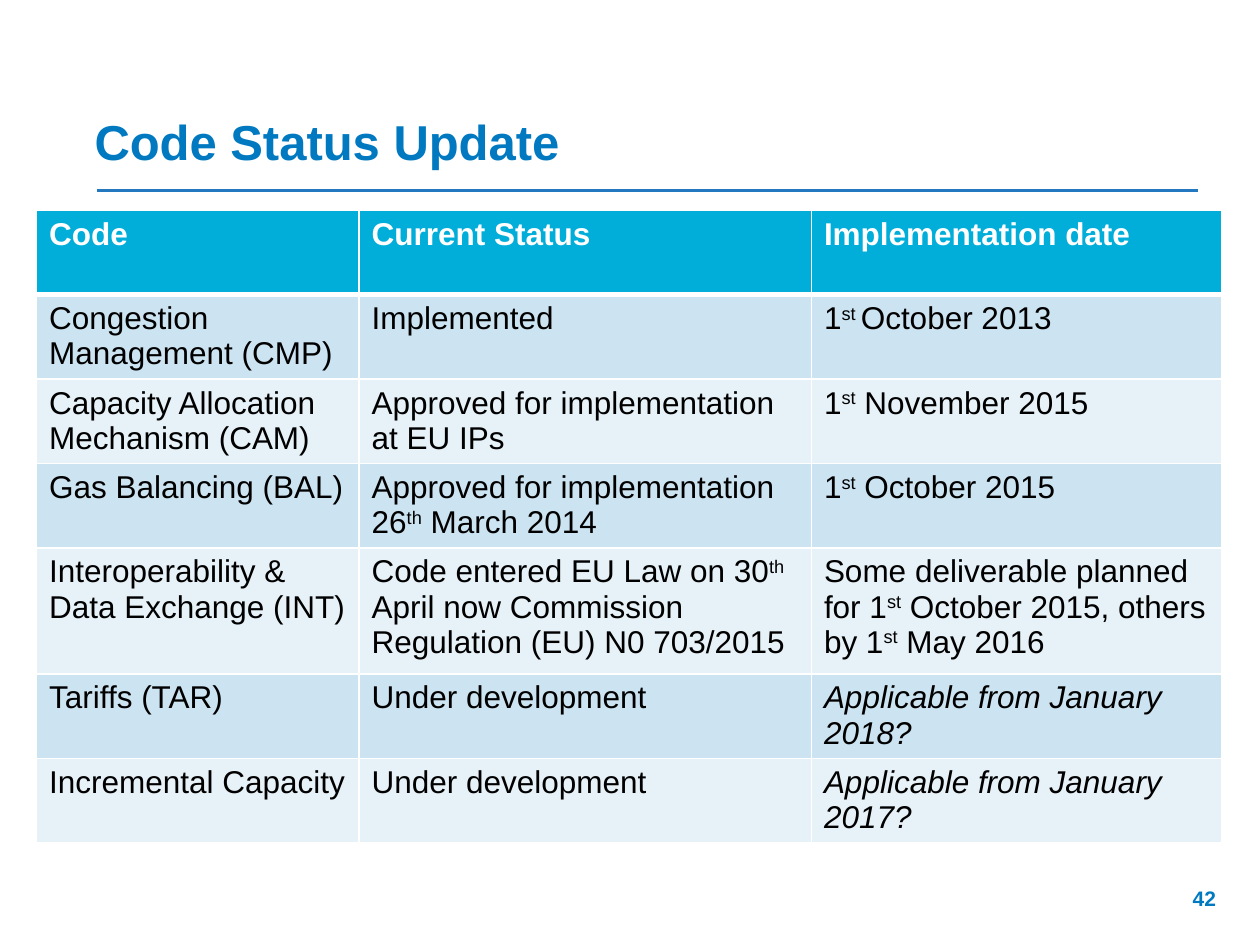
from lxml import etree
from pptx import Presentation
from pptx.dml.color import RGBColor
from pptx.enum import shapes, text
from pptx.oxml import ns
from pptx.util import Inches, Pt

BLUE = RGBColor(0x00, 0x79, 0xC1)
RULE_BLUE = RGBColor(0x24, 0x78, 0xC0)
HEADER_CYAN = RGBColor(0x00, 0xAE, 0xD9)
BAND_DARK = RGBColor(0xCC, 0xE3, 0xF1)
BAND_LIGHT = RGBColor(0xE7, 0xF2, 0xF8)
WHITE = RGBColor(0xFF, 0xFF, 0xFF)
BLACK = RGBColor(0x00, 0x00, 0x00)

# Text between ^ marks is superscript
CODE_ROWS = [
    ("Code", "Current Status", "Implementation date"),
    ("Congestion Management (CMP)", "Implemented", "1^st ^October 2013"),
    ("Capacity Allocation Mechanism (CAM)",
     "Approved for implementation at EU IPs", "1^st^ November 2015"),
    ("Gas Balancing (BAL)",
     "Approved for implementation 26^th^ March 2014", "1^st^ October 2015"),
    ("Interoperability & Data Exchange (INT)",
     "Code entered EU Law on 30^th^ April now Commission Regulation (EU) N0 703/2015",
     "Some deliverable planned for 1^st^ October 2015, others by 1^st^ May 2016"),
    ("Tariffs (TAR)", "Under development", "Applicable from January 2018?"),
    ("Incremental Capacity", "Under development", "Applicable from January 2017?"),
]
COLUMN_WIDTHS = [2.56, 3.59, 3.26]
ROW_HEIGHTS = [0.67, 0.67, 0.67, 0.67, 1, 0.67, 0.67]


def add_run(paragraph, wording, size, color, bold=False):
    run = paragraph.add_run()
    run.text = wording
    run.font.name = "Arial"
    run.font.size = Pt(size)
    run.font.bold = bold
    run.font.color.rgb = color
    return run


def set_white_borders(cell, bottom_width):
    properties = cell._tc.get_or_add_tcPr()
    for side, width in (("L", 1), ("R", 1), ("T", 1), ("B", bottom_width)):
        border = etree.SubElement(properties, ns.qn(f"a:ln{side}"), w=str(Pt(width)))
        fill = etree.SubElement(border, ns.qn("a:solidFill"))
        etree.SubElement(fill, ns.qn("a:srgbClr"), val=str(WHITE))


prs = Presentation()
prs.slide_width, prs.slide_height = Inches(10), Inches(7.5)
slide = prs.slides.add_slide(prs.slide_layouts[5])

# Title and the rule under it
title = slide.shapes.title
title.left, title.top = Inches(0.65), Inches(0.83)
title.width, title.height = Inches(8.85), Inches(0.57)
title.text_frame.vertical_anchor = text.MSO_ANCHOR.BOTTOM
title.text_frame.auto_size = text.MSO_AUTO_SIZE.NONE
heading = title.text_frame.paragraphs[0]
heading.alignment = text.PP_ALIGN.LEFT
add_run(heading, "Code Status Update", 28, BLUE, bold=True)

rule = slide.shapes.add_connector(
    shapes.MSO_CONNECTOR.STRAIGHT, Inches(0.77), Inches(1.51), Inches(9.51), Inches(1.51))
rule.line.color.rgb = RULE_BLUE
rule.line.width = Pt(1.5)
etree.SubElement(rule._element.spPr, ns.qn("a:effectLst"))

# Status table
status = slide.shapes.add_table(
    len(CODE_ROWS), len(COLUMN_WIDTHS), Inches(0.29), Inches(1.67),
    Inches(sum(COLUMN_WIDTHS)), Inches(sum(ROW_HEIGHTS))).table
for column, width in zip(status.columns, COLUMN_WIDTHS):
    column.width = Inches(width)
for row, height in zip(status.rows, ROW_HEIGHTS):
    row.height = Inches(height)

for r, entries in enumerate(CODE_ROWS):
    is_header = r == 0
    band = HEADER_CYAN if is_header else BAND_DARK if r % 2 else BAND_LIGHT
    for c, entry in enumerate(entries):
        cell = status.cell(r, c)
        set_white_borders(cell, 3 if is_header else 1)
        cell.fill.solid()
        cell.fill.fore_color.rgb = band
        paragraph = cell.text_frame.paragraphs[0]
        for i, wording in enumerate(entry.split("^")):
            run = add_run(paragraph, wording, 18, WHITE if is_header else BLACK, is_header)
            run.font.italic = entry.endswith("?")
            if i % 2:
                run.font._element.set("baseline", "30000")

# Page number
page_number = slide.shapes.add_textbox(
    Inches(7.42), Inches(6.98), Inches(2.33), Inches(0.4)).text_frame
page_number.word_wrap = True
page_number.paragraphs[0].alignment = text.PP_ALIGN.RIGHT
add_run(page_number.paragraphs[0], "42", 12, BLUE, bold=True)

prs.save("out.pptx")
